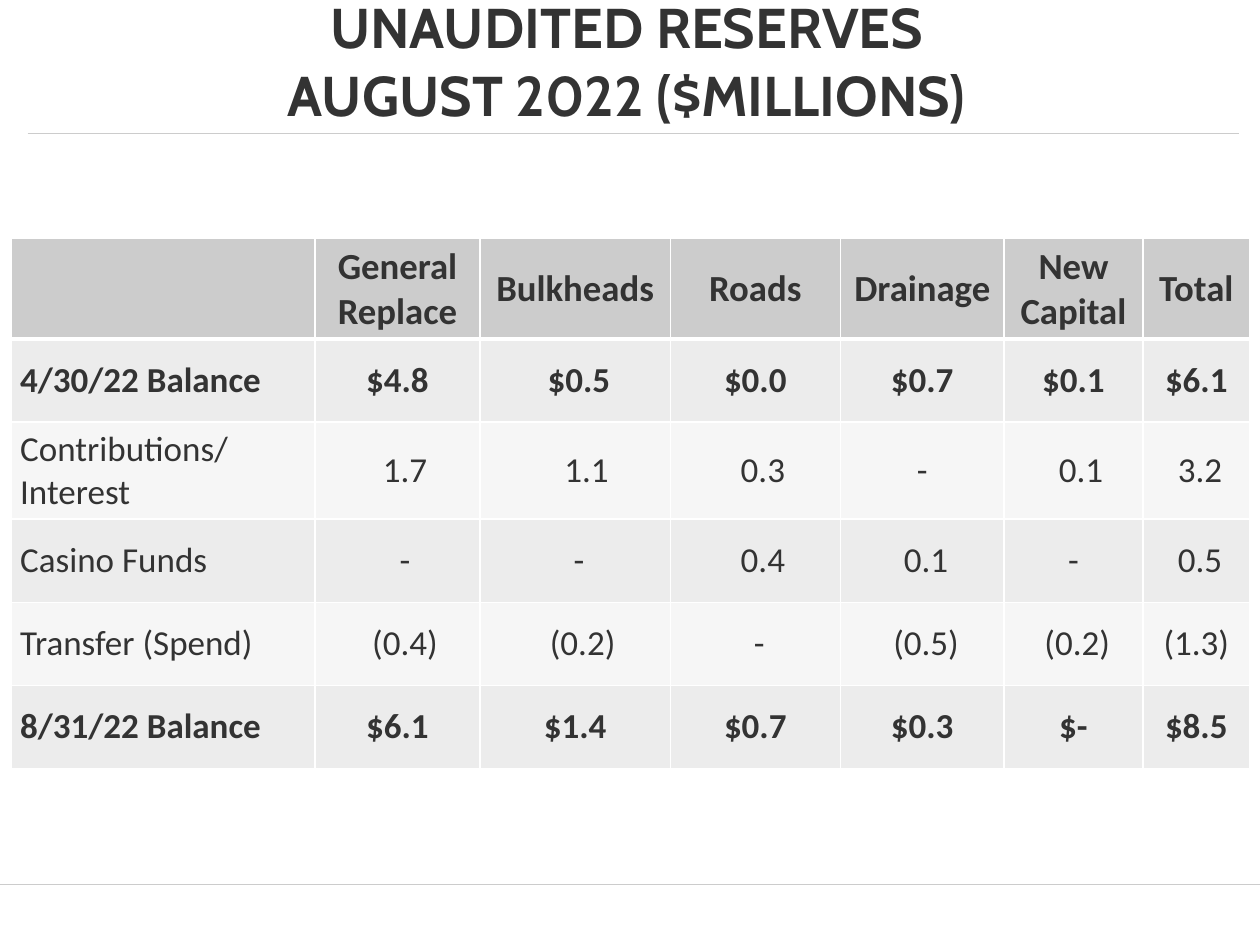
from lxml import etree
from pptx import Presentation
from pptx import util as u
from pptx.dml.color import RGBColor
from pptx.enum import shapes, text
from pptx.oxml.ns import qn

TITLE = ["UNAUDITED RESERVES", "AUGUST 2022 ($MILLIONS)"]
FUNDS = ["General Replace", "Bulkheads", "Roads", "Drainage", "New Capital", "Total"]
BALANCES = [
    ("4/30/22 Balance", ["$4.8", "$0.5", "$0.0", "$0.7", "$0.1", "$6.1"], [0, 1, 0, 0, 0, 0]),
    ("Contributions/\nInterest", ["1.7", "1.1", "0.3", "-", "0.1", "3.2"], [2, 3, 2, 0, 2, 1]),
    ("Casino Funds", ["-", "-", "0.4", "0.1", "-", "0.5"], [2, 1, 2, 1, 0, 1]),
    ("Transfer (Spend)", ["(0.4)", "(0.2)", "-", "(0.5)", "(0.2)", "(1.3)"], [2, 2, 1, 1, 1, 0]),
    ("8/31/22 Balance", ["$6.1", "$1.4", "$0.7", "$0.3", "$-", "$8.5"], [0, 0, 0, 0, 0, 0]),
]
COLUMN_WIDTHS = [2.41, 1.31, 1.51, 1.35, 1.3, 1.1, 0.85]
ROW_HEIGHTS = [0.8, 0.66, 0.77, 0.66, 0.66, 0.66]
RULES = [(0, 10, 7.02, 1), (0.22, 9.83, 1.06, 0.5)]
NUDGE = 0.06

THEME = {
    "ink": "333333", "rule": "CCCCCC", "border": "FFFFFF",
    "header": "CCCCCC", "bands": ["ECECEC", "F6F6F6"],
    "title_font": "Cabin", "table_font": "Calibri",
    "title_size": 32, "header_size": 21, "body_size": 20,
}


def color(name):
    return RGBColor.from_string(name)


def add_run(paragraph, words, font, size, bold):
    run = paragraph.add_run()
    run.text = words
    run.font.name = font
    run.font.size = u.Pt(size)
    run.font.bold = bold
    run.font.color.rgb = color(THEME["ink"])


def add_rule(slide, left, right, y, weight):
    rule = slide.shapes.add_connector(
        shapes.MSO_CONNECTOR.STRAIGHT,
        u.Inches(left), u.Inches(y), u.Inches(right), u.Inches(y))
    rule.line.color.rgb = color(THEME["rule"])
    rule.line.width = u.Pt(weight)
    etree.SubElement(rule._element.spPr, qn("a:effectLst"))


def add_title(slide):
    title = slide.shapes.add_textbox(
        u.Inches(0.13), 0, u.Inches(9.69), u.Inches(1.06))
    frame = title.text_frame
    frame.word_wrap = True
    frame.vertical_anchor = text.MSO_ANCHOR.BOTTOM
    paragraph = frame.paragraphs[0]
    paragraph.alignment = text.PP_ALIGN.CENTER
    for index, line in enumerate(TITLE):
        if index:
            paragraph.add_line_break()
        add_run(paragraph, line, THEME["title_font"], THEME["title_size"], True)


def set_borders(cell, top, bottom):
    properties = cell._tc.get_or_add_tcPr()
    for side, weight in (("L", 1), ("R", 1), ("T", top), ("B", bottom)):
        border = etree.SubElement(properties, qn(f"a:ln{side}"), w=str(u.Pt(weight)))
        fill = etree.SubElement(border, qn("a:solidFill"))
        etree.SubElement(fill, qn("a:srgbClr"), val=THEME["border"])


def fill_cell(cell, words, fill, size, bold, align, nudge=0):
    cell.margin_left = u.Inches(0.07 + nudge * NUDGE)
    cell.margin_right = u.Inches(0.07)
    cell.vertical_anchor = text.MSO_ANCHOR.MIDDLE
    cell.fill.solid()
    cell.fill.fore_color.rgb = color(fill)
    frame = cell.text_frame
    for index, line in enumerate(words.split("\n") if words else []):
        paragraph = frame.add_paragraph() if index else frame.paragraphs[0]
        paragraph.alignment = align
        add_run(paragraph, line, THEME["table_font"], size, bold)


def add_reserves(slide):
    reserves = slide.shapes.add_table(
        len(ROW_HEIGHTS), len(COLUMN_WIDTHS), u.Inches(0.09), u.Inches(1.89),
        u.Inches(sum(COLUMN_WIDTHS)), u.Inches(sum(ROW_HEIGHTS))).table
    for column, width in zip(reserves.columns, COLUMN_WIDTHS):
        column.width = u.Inches(width)
    for row, height in zip(reserves.rows, ROW_HEIGHTS):
        row.height = u.Inches(height)

    center, left = text.PP_ALIGN.CENTER, text.PP_ALIGN.LEFT
    for c, fund in enumerate([""] + FUNDS):
        cell = reserves.cell(0, c)
        set_borders(cell, 1, 3)
        fill_cell(cell, fund, THEME["header"], THEME["header_size"], True, center)

    for r, (label, amounts, nudges) in enumerate(BALANCES, 1):
        bold = label.endswith("Balance")
        band = THEME["bands"][(r - 1) % 2]
        for c, (words, nudge) in enumerate(zip([label] + amounts, [0] + nudges)):
            cell = reserves.cell(r, c)
            set_borders(cell, 3 if r == 1 else 1, 1)
            fill_cell(cell, words, band, THEME["body_size"], bold,
                      center if c else left, nudge)


def main():
    deck = Presentation()
    deck.slide_width, deck.slide_height = u.Inches(10), u.Inches(7.5)
    slide = deck.slides.add_slide(deck.slide_layouts[6])
    for rule in RULES:
        add_rule(slide, *rule)
    add_title(slide)
    add_reserves(slide)
    deck.save("out.pptx")


if __name__ == "__main__":
    main()
